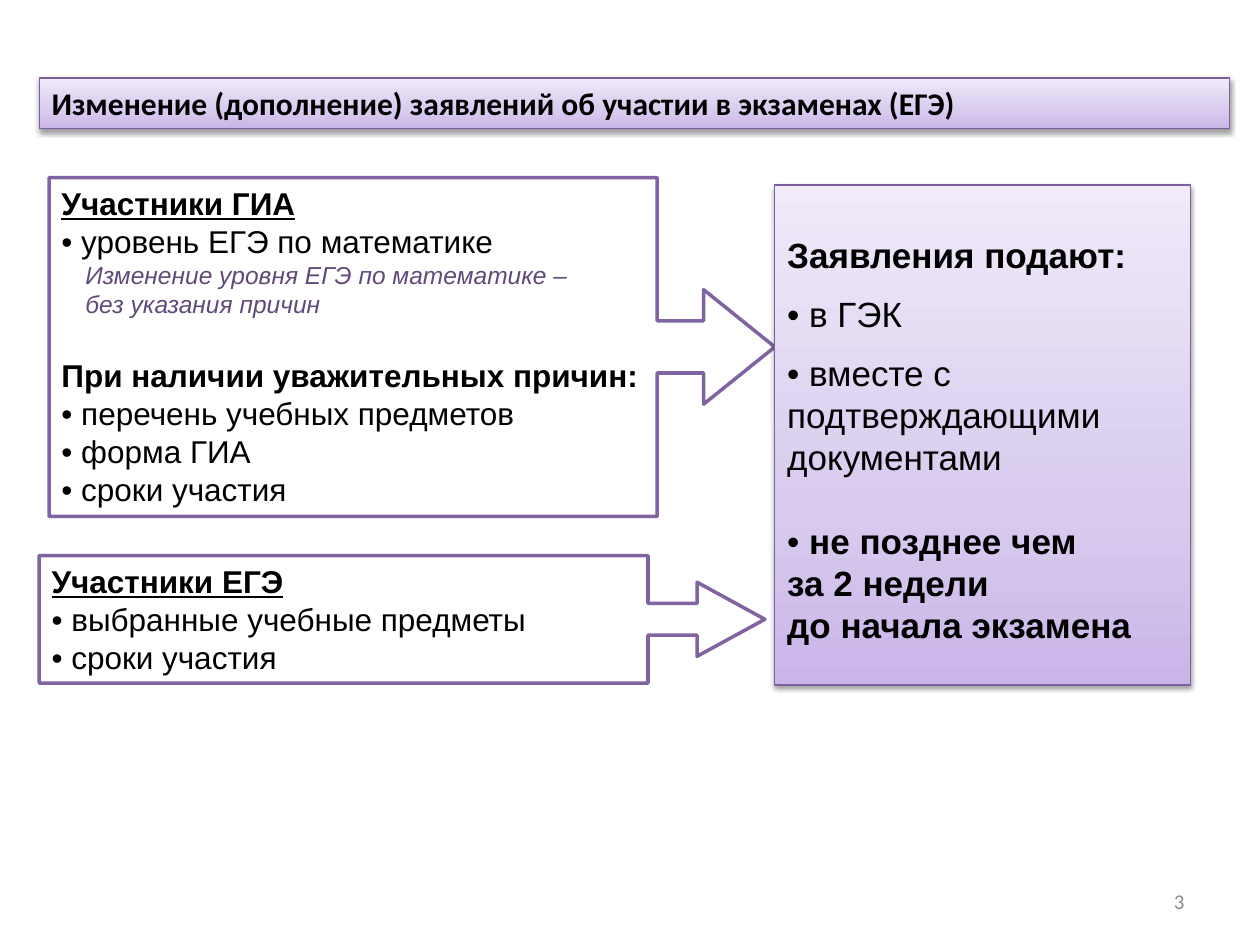
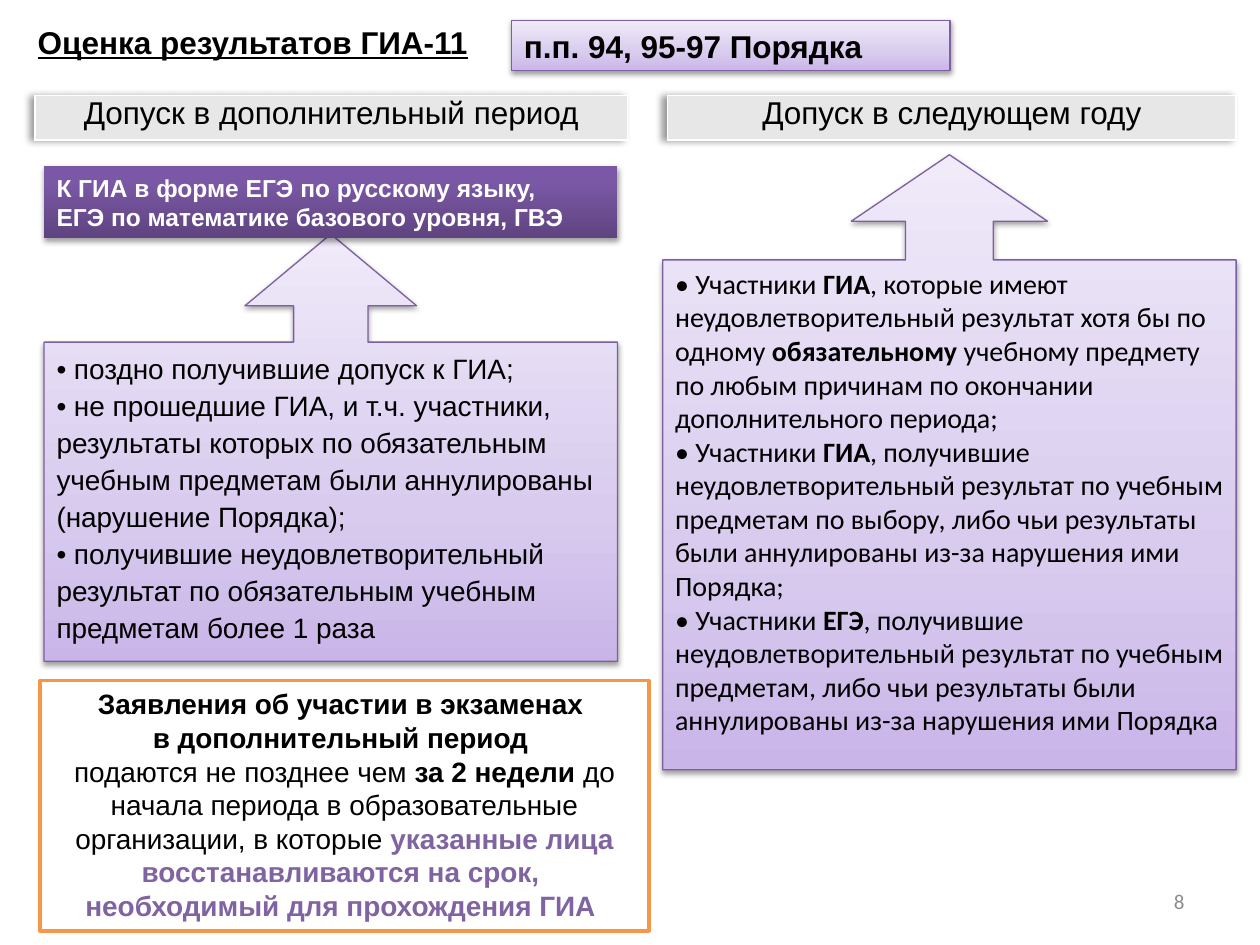
from copy import deepcopy

from lxml.etree import SubElement
from pptx import Presentation
from pptx.dml.color import RGBColor
from pptx.enum.shapes import MSO_SHAPE
from pptx.enum.text import MSO_ANCHOR, MSO_AUTO_SIZE, PP_ALIGN
from pptx.oxml.ns import qn
from pptx.util import Cm, Pt

BLACK = RGBColor(0x00, 0x00, 0x00)
WHITE = RGBColor(0xFF, 0xFF, 0xFF)
GRAY = RGBColor(0x8C, 0x8C, 0x8C)
SILVER = RGBColor(0xE7, 0xE7, 0xE7)
PURPLE = RGBColor(0x80, 0x64, 0xA2)
PLUM = RGBColor(0x60, 0x4A, 0x7B)
EDGE = RGBColor(0x7D, 0x60, 0xA0)
ORANGE = RGBColor(0xF7, 0x96, 0x46)
LILAC = (
    (0, RGBColor(0xC9, 0xB5, 0xE8)),
    (0.35, RGBColor(0xD8, 0xCB, 0xEE)),
    (1, RGBColor(0xF0, 0xEA, 0xF9)),
)
VIOLET = (
    (0, RGBColor(0x5F, 0x44, 0x80)),
    (0.8, RGBColor(0x7B, 0x58, 0xA6)),
    (1, RGBColor(0x7C, 0x57, 0xA8)),
)
SANS, BODY = "Arial", "Calibri"
BAR = 1.02


def place(box):
    return [Cm(value) for value in box]


def write(frame, lines, size=18, font=SANS, color=BLACK, align=PP_ALIGN.LEFT,
          spacing=None, **marks):
    """Write paragraphs; a line is text or (text, own settings).

    Asterisks switch bold on and off, and ^ opens a purple piece.
    """
    for number, line in enumerate(lines):
        text, own = (line, {}) if isinstance(line, str) else line
        own = {**marks, **own}
        para = frame.paragraphs[0] if number == 0 else frame.add_paragraph()
        para.alignment = align
        para.line_spacing = spacing
        if "gap" in own:
            para.space_before = Pt(own["gap"])
        face = para.font
        face.name, face.size = font, Pt(own.get("size", size))
        face.color.rgb = own.get("color", color)
        face.bold = own.get("bold", False)
        face.italic = own.get("italic", False)
        face.underline = own.get("under", False)
        if "indent" in own:
            props = para._p.get_or_add_pPr()
            props.set("marL", str(Cm(own["indent"])))
            props.set("indent", "0")
        for turn, piece in enumerate(text.split("*")):
            for row, part in enumerate(piece.lstrip("^").split("\n")):
                if row:
                    para.add_line_break()
                if not part:
                    continue
                run = para.add_run()
                run.text = part
                if turn % 2:
                    run.font.bold = True
                if piece.startswith("^"):
                    run.font.color.rgb = PURPLE


def cast(effects, alpha=38, blur=3.15, reach=1.57, angle=90):
    """Add an outer shadow to an effect list."""
    shade = SubElement(effects, qn("a:outerShdw"), blurRad=str(Pt(blur)),
                       dist=str(Pt(reach)), dir=str(angle * 60000),
                       rotWithShape="0")
    tint = SubElement(shade, qn("a:srgbClr"), val=str(BLACK))
    SubElement(tint, qn("a:alpha"), val=str(alpha * 1000))


def blend(shape, stops):
    """Fill from bottom to top with three stops and cast a shadow."""
    shape.fill.gradient()
    shape.fill.gradient_angle = 90
    props = shape.element.spPr
    series = props.find(".//" + qn("a:gsLst"))
    series.insert(1, deepcopy(series[0]))
    for stop, (at, color) in zip(shape.fill.gradient_stops, stops):
        stop.position = at
        stop.color.rgb = color
    shape.shadow.inherit = False
    cast(props.find(qn("a:effectLst")))


def edge(shape, color, width):
    shape.line.color.rgb = color
    shape.line.width = Pt(width)


def settle(shape, top=0.13, right=0.25):
    """Wrap text from the top left corner and return its frame."""
    frame = shape.text_frame
    frame.word_wrap = True
    frame.auto_size = MSO_AUTO_SIZE.NONE
    frame.vertical_anchor = MSO_ANCHOR.TOP
    frame.margin_left, frame.margin_right = Cm(0.25), Cm(right)
    frame.margin_top, frame.margin_bottom = Cm(top), Cm(0.13)
    return frame


def panel(slide, box, lines, kind=MSO_SHAPE.RECTANGLE, adjust=(), stops=None,
          rim=EDGE, top=0.13, right=0.25, **style):
    """Add a text shape: white with a thick rim, or blended with a thin one."""
    shape = slide.shapes.add_shape(kind, *place(box))
    for index, value in enumerate(adjust):
        shape.adjustments[index] = value
    if stops:
        blend(shape, stops)
    else:
        shape.shadow.inherit = False
        shape.fill.solid()
        shape.fill.fore_color.rgb = WHITE
    if rim is None:
        shape.line.fill.background()
    else:
        edge(shape, rim, 0.75 if stops else 2)
    write(settle(shape, top, right), lines, **style)


def start(deck, box, title, page, **style):
    """Add a slide with its title and page number."""
    slide = deck.slides.add_slide(deck.slide_layouts[5])
    head = slide.shapes.title
    head.left, head.top, head.width, head.height = place(box)
    write(settle(head), [title], bold=True, **style)
    note = slide.shapes.add_textbox(*place((18.21, 17.65, 5.92, BAR)))
    frame = settle(note)
    frame.vertical_anchor = MSO_ANCHOR.MIDDLE
    write(frame, [page], size=12, font=BODY, color=GRAY, align=PP_ALIGN.RIGHT)
    return slide


def column(slide, box, head, shift, adjust, lines, **style):
    """Put a heading strip at the top of the box and an arrow panel under it."""
    left, top, width, height = box
    drop, tall = shift[1], height - shift[1]
    panel(slide, (left + shift[0], top + drop, 11.56, tall), lines,
          MSO_SHAPE.UP_ARROW_CALLOUT, adjust, LILAC, size=16, right=0.1,
          **style)
    table = slide.shapes.add_table(1, 1, *place((left, top, width, 0.89))).table
    table.first_row = table.horz_banding = False
    effects = table._tbl.tblPr.makeelement(qn("a:effectLst"))
    table._tbl.tblPr.insert(0, effects)
    cast(effects, 40, 4, 3, 180)
    cell = table.cell(0, 0)
    cell.fill.solid()
    cell.fill.fore_color.rgb = SILVER
    cell.margin_left = cell.margin_right = 0
    cell.margin_top = cell.margin_bottom = 0
    write(cell.text_frame, [head], align=PP_ALIGN.CENTER)


def changes(deck):
    slide = start(deck, (0.79, 1.57, 24, BAR),
                  "Изменение (дополнение) заявлений об участии в экзаменах (ЕГЭ)",
                  "3", font=BODY)
    blend(slide.shapes.title, LILAC)
    edge(slide.shapes.title, EDGE, 0.75)
    lead = {"bold": True, "under": True}
    arrow = MSO_SHAPE.RIGHT_ARROW_CALLOUT
    panel(slide, (0.99, 3.58, 14.63, 6.83), [
        ("Участники ГИА", lead),
        "• уровень ЕГЭ по математике",
        ("Изменение уровня ЕГЭ по математике – \nбез указания причин",
         {"size": 14, "color": PLUM, "italic": True, "indent": 0.48}),
        ("При наличии уважительных причин:", {"bold": True, "gap": 21.6}),
        "• перечень учебных предметов",
        "• форма ГИА",
        "• сроки участия",
    ], arrow, (0.154, 0.169, 0.21, 0.838), rim=PURPLE)
    panel(slide, (0.79, 11.2, 14.63, 2.57), [
        ("Участники ЕГЭ", lead),
        "• выбранные учебные предметы",
        "• сроки участия",
    ], arrow, (0.25, 0.291, 0.532, 0.839), rim=PURPLE)
    panel(slide, (15.62, 3.73, 8.38, 10.08), [
        ("Заявления подают:", {"bold": True}),
        ("• в ГЭК", {"gap": 9.7}),
        ("• вместе с подтверждающими документами", {"gap": 9.7}),
        ("• *не позднее чем \nза 2 недели \nдо начала экзамена*", {"gap": 24}),
    ], stops=LILAC, top=0.97, size=20)


def results(deck):
    slide = start(deck, (0.51, 0.33, 9.4, BAR), "Оценка результатов ГИА-11",
                  "8", under=True)
    panel(slide, (10.31, 0.41, 8.84, BAR), ["п.п. 94, 95-97 Порядка"],
          stops=LILAC, bold=True)
    column(slide, (0.71, 1.93, 11.94, 11.4), "Допуск в дополнительный период",
           (0.18, 2.79), (0.174, 0.201, 0.168, 0.747), [
        "• поздно получившие допуск к ГИА;",
        "• не прошедшие ГИА, и т.ч. участники, результаты которых по "
        "обязательным учебным предметам были аннулированы (нарушение Порядка);",
        "• получившие неудовлетворительный результат по обязательным учебным "
        "предметам более 1 раза",
    ], spacing=1.1)
    column(slide, (13.46, 1.93, 11.46, 13.59), "Допуск в следующем году",
           (-0.1, 1.19), (0.153, 0.171, 0.116, 0.829), [
        "• Участники *ГИА*, которые имеют неудовлетворительный результат хотя "
        "бы по одному *обязательному *учебному предмету по любым причинам по "
        "окончании дополнительного периода;",
        "• Участники *ГИА*, получившие неудовлетворительный результат по "
        "учебным предметам по выбору, либо чьи результаты были аннулированы "
        "из-за нарушения ими Порядка;",
        "• Участники *ЕГЭ*, получившие неудовлетворительный результат по "
        "учебным предметам, либо чьи результаты были аннулированы из-за "
        "нарушения ими Порядка",
    ], font=BODY)
    panel(slide, (0.89, 3.35, 11.56, 1.45), [
        "К ГИА в форме ЕГЭ по русскому языку, \n"
        "ЕГЭ по математике базового уровня, ГВЭ",
    ], stops=VIOLET, rim=None, size=14, color=WHITE, bold=True)
    panel(slide, (0.81, 13.72, 12.27, 5.05), [
        "*Заявления об участии в экзаменах \nв дополнительный период \n*"
        "подаются не позднее чем *за 2 недели *до начала периода в "
        "образовательные организации, в которые *^указанные лица "
        "восстанавливаются на срок, \nнеобходимый для прохождения ГИА *",
    ], rim=ORANGE, size=16, align=PP_ALIGN.CENTER)


def main():
    deck = Presentation()
    deck.slide_width, deck.slide_height = Cm(25.4), Cm(19.05)
    changes(deck)
    results(deck)
    deck.save("out.pptx")


if __name__ == "__main__":
    main()
